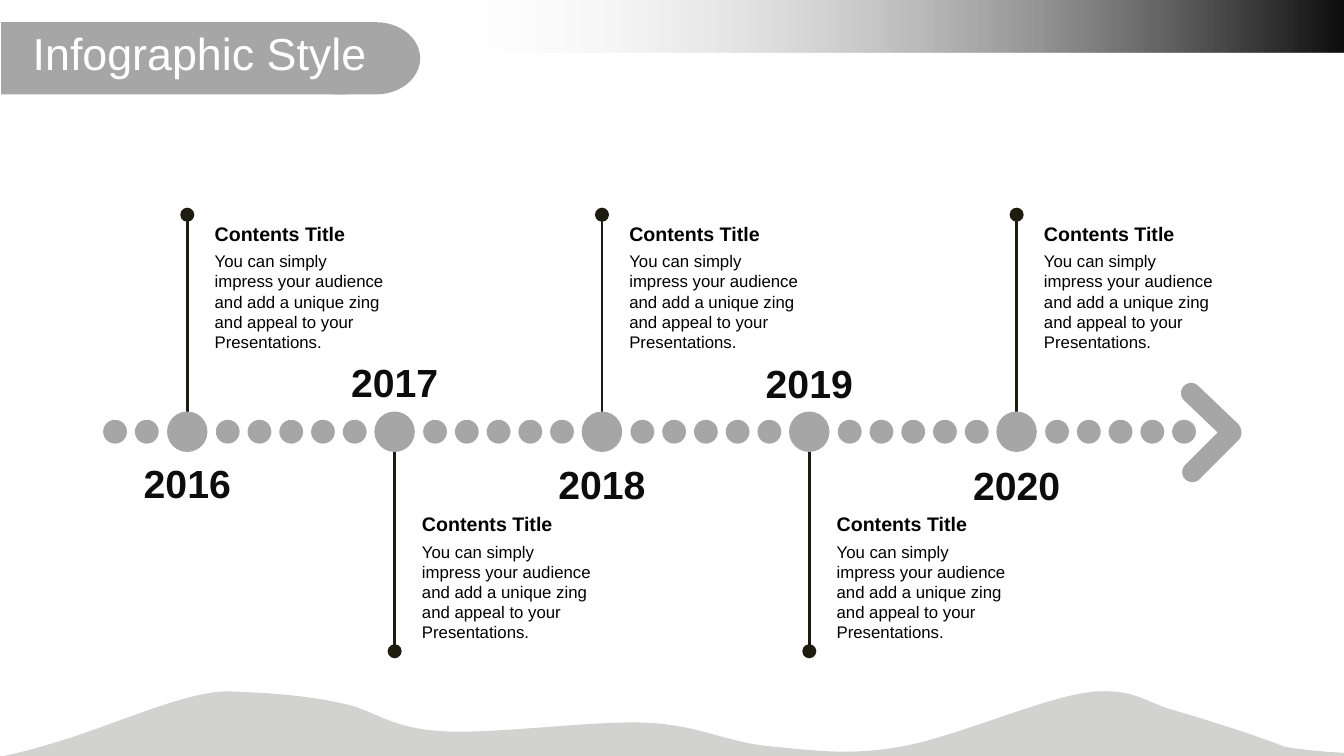
from lxml import etree
from pptx import Presentation
from pptx.dml.color import RGBColor
from pptx.enum.shapes import MSO_CONNECTOR, MSO_SHAPE
from pptx.enum.text import MSO_ANCHOR, MSO_AUTO_SIZE, PP_ALIGN
from pptx.oxml.ns import qn
from pptx.util import Cm, Pt

RECT, OVAL = MSO_SHAPE.RECTANGLE, MSO_SHAPE.OVAL
ROUND, DELAY = MSO_SHAPE.ROUNDED_RECTANGLE, MSO_SHAPE.FLOWCHART_DELAY
LINE = MSO_CONNECTOR.STRAIGHT
LEFT, MID = PP_ALIGN.LEFT, PP_ALIGN.CENTER
TOP, FIXED = MSO_ANCHOR.TOP, MSO_AUTO_SIZE.NONE

# Content
TITLE = "Infographic Style"
HEAD = "Contents Title"
BODY = ("You can simply impress your audience and add a unique zing "
        "and appeal to your Presentations.")
STAGES = [  # year, top of the year label, card above the axis
    ("2016", 11.46, True),
    ("2017", 8.9, False),
    ("2018", 11.48, True),
    ("2019", 8.93, False),
    ("2020", 11.51, True),
]
COLORS = {"gray": "A6A6A6", "wave": "D2D2D0", "stem": "1E1C11",
          "year": "0D0D0D", "text": "000000", "white": "FFFFFF"}
FONT = "Arial"

# Layout in cm
WIDTH, HEIGHT = 33.87, 19.05
AXIS, FIRST, LAST = 10.88, 4.72, 25.62
PITCH = (LAST - FIRST) / (len(STAGES) - 1)
NODE, DOT, NEAR, STEP, DOTS = 1.02, 0.6, 1.02, 0.8, 5
UPPER = {"stem": (10.41, 5.41), "card": 5.46}
LOWER = {"stem": (11.4, 16.41), "card": 12.78}
ARROW = [(29.57, 10.13, 43.7), (29.59, 11.15, 315)]

# Hills: a start point, then two control points and an end point per curve
START = (0.1, 19.05)
CURVES = [
    ((0.46, 18.97), (0.89, 18.87), (1.35, 18.72)),
    ((2.26, 18.47), (3.84, 17.81), (4.67, 17.6)),
    ((5.51, 17.37), (5.72, 17.42), (6.38, 17.45)),
    ((7.04, 17.48), (7.85, 17.55), (8.64, 17.73)),
    ((9.42, 17.88), (9.8, 18.34), (11.07, 18.42)),
    ((12.34, 18.52), (14.86, 18.16), (16.23, 18.21)),
    ((17.6, 18.26), (18.26, 18.69), (19.35, 18.8)),
    ((20.42, 18.9), (21.36, 19.05), (22.68, 18.82)),
    ((24.03, 18.59), (26.24, 17.6), (27.41, 17.45)),
    ((27.53, 17.42), (27.66, 17.42), (27.79, 17.42)),
    ((28.63, 17.4), (28.88, 17.7), (29.62, 17.91)),
    ((30.43, 18.14), (31.75, 18.57), (32.33, 18.8)),
    ((32.46, 18.85), (32.94, 18.9), (33.5, 18.95)),
]
EDGE = [(WIDTH, 18.97), (WIDTH, HEIGHT), (0, HEIGHT)]


def color(name):
    return RGBColor.from_string(COLORS[name])


def paint(shape, name):
    shape.fill.solid()
    shape.fill.fore_color.rgb = color(name)
    shape.line.fill.background()
    shape.shadow.inherit = False


def add_part(kind, x, y, w, h, name="gray"):
    part = slide.shapes.add_shape(kind, Cm(x), Cm(y), Cm(w), Cm(h))
    paint(part, name)
    return part


def add_disc(x, size):
    add_part(OVAL, x - size / 2, AXIS - size / 2, size, size)


def style(frame, size, name, bold=False, align=LEFT):
    frame.word_wrap = True
    for para in frame.paragraphs:
        para.alignment = align
        for run in para.runs:
            font = run.font
            font.name, font.size, font.bold = FONT, Pt(size), bold
            font.color.rgb = color(name)


def add_text(text, x, y, w, h, *look):
    box = slide.shapes.add_textbox(Cm(x), Cm(y), Cm(w), Cm(h))
    box.text_frame.text = text
    style(box.text_frame, *look)


def add_stem(x, start, end):
    stem = slide.shapes.add_connector(LINE, Cm(x), Cm(start), Cm(x), Cm(end))
    stem.line.color.rgb = color("stem")
    stem.line.width = Pt(2)
    etree.SubElement(stem.line._get_or_add_ln(), qn("a:tailEnd"),
                     type="oval", w="lg", len="lg")
    etree.SubElement(stem.element.spPr, qn("a:effectLst"))


def add_hills():
    # Points are whole hundredths of a cm
    grid = [[(round(x * 100), round(y * 100)) for x, y in curve]
            for curve in [[START], *CURVES, EDGE]]
    ends = [curve[-1] for curve in grid[1:-1]]
    pen = slide.shapes.build_freeform(*grid[0][0], scale=Cm(0.01))
    pen.add_line_segments(ends + grid[-1], close=True)
    hills = pen.convert_to_shape()
    paint(hills, "wave")
    # Turn the straight segments into curves
    low = min(y for x, y in ends)
    lines = list(hills.element.iter(qn("a:lnTo")))
    for line, curve in zip(lines, grid[1:-1]):
        line.tag = qn("a:cubicBezTo")
        line.clear()
        for x, y in curve:
            etree.SubElement(line, qn("a:pt"), x=str(x), y=str(y - low))


deck = Presentation()
deck.slide_width, deck.slide_height = Cm(WIDTH), Cm(HEIGHT)
slide = deck.slides.add_slide(deck.slide_layouts[5])

# Top band, fading in from clear
band = add_part(RECT, 0.64, 0, WIDTH - 0.64, 1.33)
band.fill.gradient()
band.fill.gradient_angle = 0
for stop, (place, name) in zip(band.fill.gradient_stops,
                               [(0.31, "white"), (1, "year")]):
    stop.position = place
    stop.color.rgb = color(name)
clear = next(band.element.iter(qn("a:srgbClr")))
etree.SubElement(clear, qn("a:alpha"), val="0")

add_hills()

# Timeline
for x in (FIRST - NEAR - STEP, FIRST - NEAR):
    add_disc(x, DOT)
for i, (year, top, above) in enumerate(STAGES):
    x = FIRST + i * PITCH
    side = UPPER if above else LOWER
    add_stem(x, *side["stem"])
    add_text(HEAD, x + 0.44, side["card"], 4.88, 0.86, 14, "text", True)
    add_text(BODY, x + 0.44, side["card"] + 0.74, 4.88, 2.82, 12, "text")
    add_text(year, x - 1.67, top, 3.34, 1.45, 28, "year", True, MID)
    add_disc(x, NODE)
    for j in range(DOTS):
        add_disc(x + NEAR + j * STEP, DOT)

# Arrow
for x, y, turn in ARROW:
    bar = add_part(ROUND, x, y, 1.9, 0.51)
    bar.adjustments[0] = 0.5
    bar.rotation = turn

# Title
add_part(DELAY, 8.36, 0.56, 2.23, 1.82)
add_part(RECT, 0.03, 0.56, 8.74, 1.82)
title = slide.shapes.title
title.left, title.top = Cm(0.57), Cm(0.67)
title.width, title.height = Cm(17.3), Cm(2)
frame = title.text_frame
frame.text = TITLE
frame.vertical_anchor, frame.auto_size = TOP, FIXED
frame.paragraphs[0].line_spacing = 0.9
style(frame, 32, "white")
slide.shapes.element.append(title.element)

deck.save("out.pptx")
